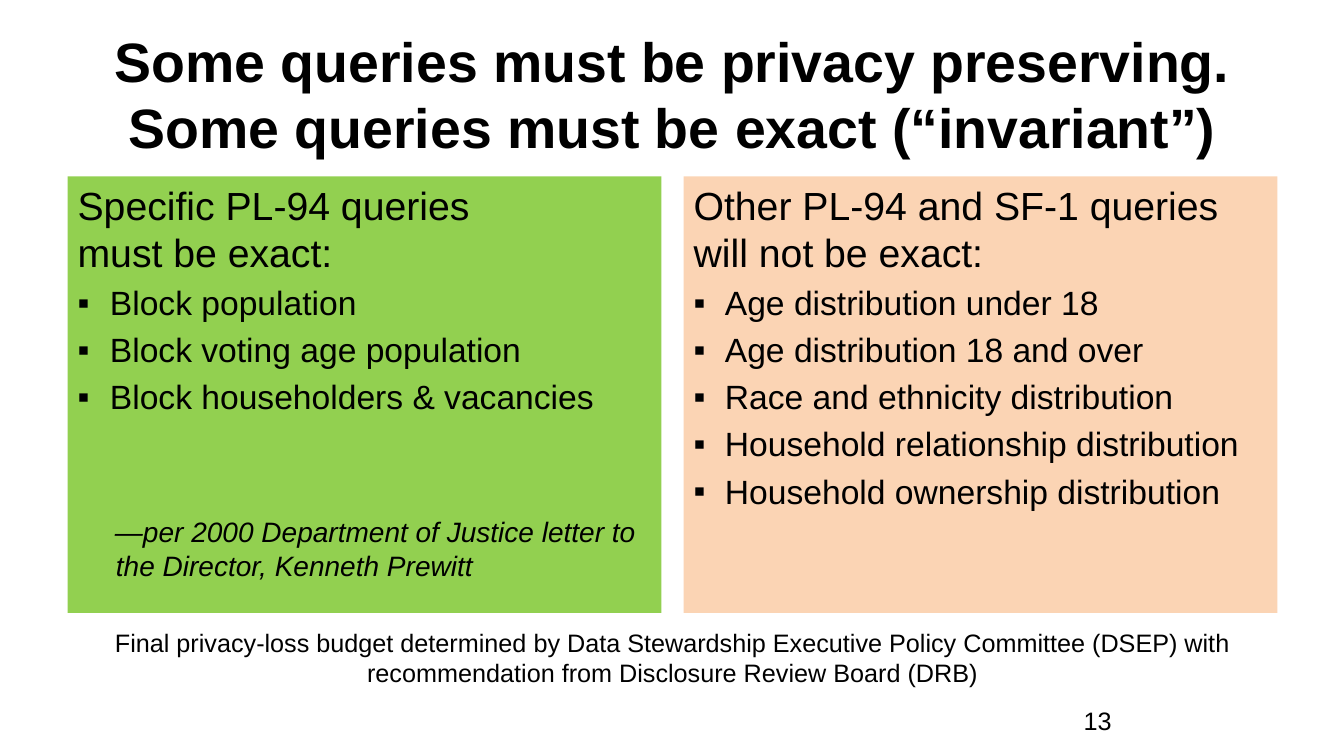
from copy import deepcopy

from lxml import etree
from pptx import Presentation
from pptx.dml.color import RGBColor
from pptx.enum.text import MSO_ANCHOR, MSO_AUTO_SIZE, PP_ALIGN
from pptx.oxml.ns import qn
from pptx.util import Inches, Pt

CENTER, LEFT = PP_ALIGN.CENTER, PP_ALIGN.LEFT
TOP, MIDDLE = MSO_ANCHOR.TOP, MSO_ANCHOR.MIDDLE
NO_AUTOFIT = MSO_AUTO_SIZE.NONE

BLACK = RGBColor(0x00, 0x00, 0x00)
GREEN = RGBColor(0x92, 0xD0, 0x50)
PEACH = RGBColor(0xFB, 0xD4, 0xB4)

MARGIN, FULL_WIDTH = 0.67, 12
PANEL_TOP, PANEL_WIDTH, PANEL_HEIGHT, PANEL_GAP = 1.75, 5.89, 4.33, 0.22


class QuerySlide:
    def __init__(self, slide, font_name="Arial", color=BLACK):
        self.slide = slide
        self.font_name = font_name
        self.color = color

    def place(self, shape, left, top, width, height, anchor=TOP):
        """Set the box of a shape and return its text frame."""
        box = {"left": left, "top": top, "width": width, "height": height}
        for name, value in box.items():
            setattr(shape, name, Inches(value))
        frame = shape.text_frame
        layout = {"word_wrap": True, "auto_size": NO_AUTOFIT, "vertical_anchor": anchor}
        for name, value in layout.items():
            setattr(frame, name, value)
        return frame

    def fill_paragraph(self, paragraph, text, size, align=LEFT, level=0, margin=0, indent=0,
                       bullet=None, before=0, **emphasis):
        paragraph.text = text
        properties = paragraph._p.get_or_add_pPr()
        properties.set("marL", str(Inches(margin)))
        properties.set("indent", str(Inches(indent)))
        if bullet:
            bullet_color = etree.SubElement(properties, qn("a:buClr"))
            etree.SubElement(bullet_color, qn("a:srgbClr"), val=str(self.color))
            etree.SubElement(properties, qn("a:buFont"), typeface=self.font_name)
            etree.SubElement(properties, qn("a:buChar"), char=bullet)
        else:
            etree.SubElement(properties, qn("a:buNone"))
        paragraph.level = level
        paragraph.alignment = align
        paragraph.space_before = Pt(before)
        style = {"name": self.font_name, "size": Pt(size), **emphasis}
        for run in paragraph.runs:
            for name, value in style.items():
                setattr(run.font, name, value)
            run.font.color.rgb = self.color
        for line_break in paragraph._p.findall(qn("a:br")):
            line_break.append(deepcopy(paragraph.runs[0]._r.rPr))

    def title(self, text):
        frame = self.place(self.slide.shapes.title, MARGIN, 0.3, FULL_WIDTH, 1.25, MIDDLE)
        self.fill_paragraph(frame.paragraphs[0], text, 39.6, CENTER, bold=True)

    def panel(self, column, fill, heading, queries, hanging, source=None):
        """Fill a body placeholder with a heading, bulleted queries and a source."""
        shape = self.slide.placeholders[column + 1]
        left = MARGIN + column * (PANEL_WIDTH + PANEL_GAP)
        frame = self.place(shape, left, PANEL_TOP, PANEL_WIDTH, PANEL_HEIGHT)
        shape.fill.solid()
        shape.fill.fore_color.rgb = fill
        self.fill_paragraph(frame.paragraphs[0], heading, 28)
        for query in queries:
            self.fill_paragraph(frame.add_paragraph(), query, 24, level=1, margin=hanging,
                                indent=-hanging, bullet="▪", before=4.8)
        if source:
            self.fill_paragraph(frame.add_paragraph(), source, 20, level=2, margin=0.38,
                                indent=-0.01, before=70, italic=True)

    def caption(self, text, left, top, width, height, align=LEFT):
        box = self.slide.shapes.add_textbox(0, 0, 0, 0)
        frame = self.place(box, left, top, width, height)
        self.fill_paragraph(frame.paragraphs[0], text, 18, align)


def main():
    presentation = Presentation()
    presentation.slide_width = Inches(13.33)
    presentation.slide_height = Inches(7.5)
    two_content = presentation.slide_layouts[3]
    page = QuerySlide(presentation.slides.add_slide(two_content))

    page.title("Some queries must be privacy preserving.\n"
               "Some queries must be exact (“invariant”)")
    page.panel(0, GREEN, "Specific PL-94 queries\nmust be exact:",
               ["Block population", "Block voting age population",
                "Block householders & vacancies"], 0.32,
               "—per 2000 Department of Justice letter to the Director, Kenneth Prewitt")
    page.panel(1, PEACH, "Other PL-94 and SF-1 queries will not be exact:",
               ["Age distribution under 18", "Age distribution 18 and over",
                "Race and ethnicity distribution", "Household relationship distribution",
                "Household ownership distribution"], 0.31)
    page.caption("Final privacy-loss budget determined by Data Stewardship Executive Policy "
                 "Committee (DSEP) with recommendation from Disclosure Review Board (DRB)",
                 MARGIN, 6.17, FULL_WIDTH, 0.71, CENTER)
    page.caption("13", 10.65, 6.95, 2.43, 0.4)
    presentation.save("out.pptx")


if __name__ == "__main__":
    main()
